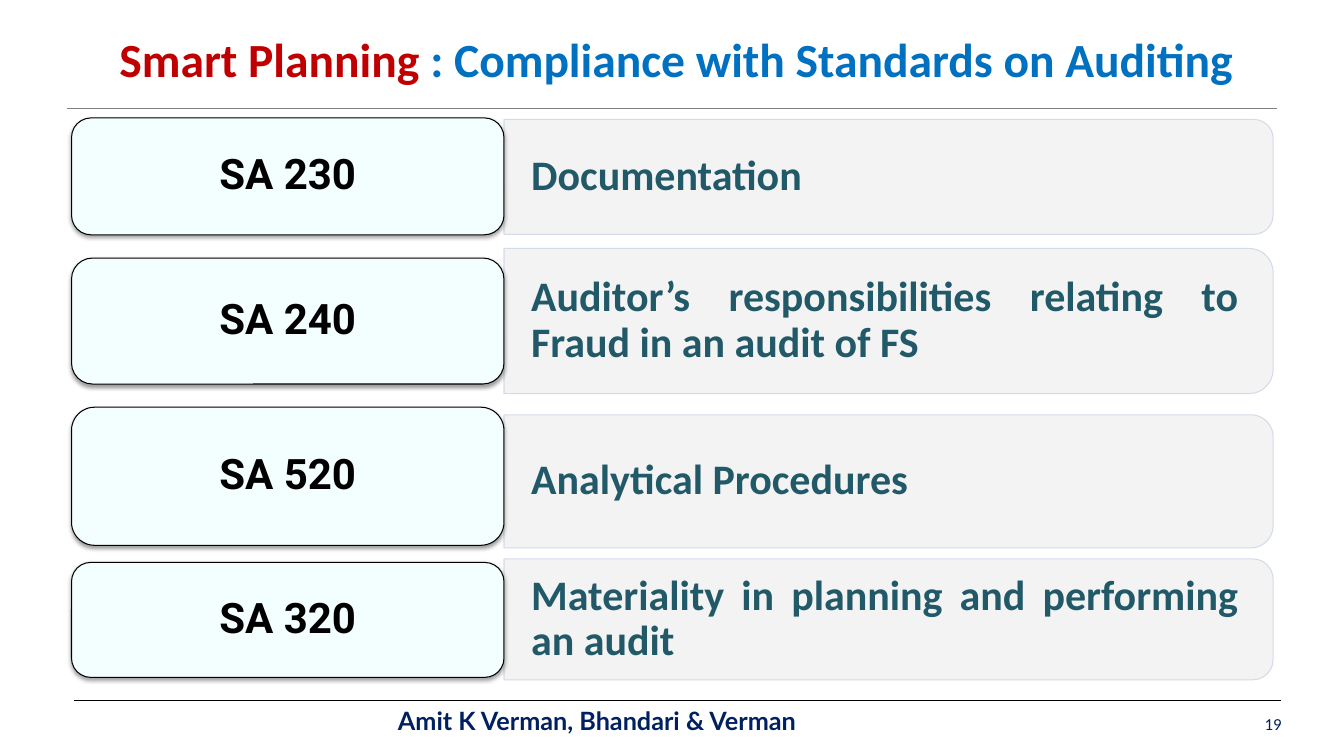
"""Build the slide on smart planning and the auditing standards."""
from lxml import etree
from pptx import Presentation, util as u
from pptx.dml.color import RGBColor
from pptx.enum import shapes, text
from pptx.oxml import ns, parse_xml

RED = RGBColor(0xC0, 0x00, 0x00)
BLUE = RGBColor(0x00, 0x70, 0xC0)
NAVY = RGBColor(0x00, 0x20, 0x60)
TEAL = RGBColor(0x21, 0x59, 0x68)
BLACK = RGBColor(0x00, 0x00, 0x00)
GREY = RGBColor(0x7F, 0x7F, 0x7F)
MINT = RGBColor(0xF3, 0xFE, 0xFF)
MIST = RGBColor(0xF2, 0xF2, 0xF2)
HAZE = RGBColor(0xD0, 0xD8, 0xE8)

COLUMNS, ROWS = 40, 30
CARD_LEFT, CARD_WIDTH = 2.13, 12.87
PANEL_LEFT, PANEL_WIDTH = 15, 22.89

STANDARDS = [
    ("SA 230", "Documentation", (7, 4.64), (7.02, 4.56)),
    ("SA 240", "Auditor’s responsibilities relating to Fraud in an audit of FS",
     (12.74, 5), (12.74, 5.76)),
    ("SA 520", "Analytical Procedures", (18.9, 5.48), (19.1, 5.28)),
    ("SA 320", "Materiality in planning and performing an audit",
     (24.6, 4.56), (24.58, 4.8)),
]


class SlideBuilder:
    """Holds the grid, the style and the current page."""

    def __init__(self):
        self.deck = Presentation()
        self.deck.slide_width, self.deck.slide_height = u.Inches(13.33), u.Inches(7.5)
        self.page = self.deck.slides.add_slide(self.deck.slide_layouts[5])

    def x(self, columns):
        return round(self.deck.slide_width * columns / COLUMNS)

    def y(self, rows):
        return round(self.deck.slide_height * rows / ROWS)

    def area(self, left, top, width, height):
        return self.x(left), self.y(top), self.x(width), self.y(height)

    def set_text(self, box, spans, size, font, align, bold=True,
                 anchor=text.MSO_ANCHOR.MIDDLE, insets=(0.1, 0.05), spacing=1.0):
        frame = box.text_frame
        frame.word_wrap, frame.auto_size = True, text.MSO_AUTO_SIZE.NONE
        frame.vertical_anchor = anchor
        frame.margin_left = frame.margin_right = u.Inches(insets[0])
        frame.margin_top = frame.margin_bottom = u.Inches(insets[1])
        para = frame.paragraphs[0]
        para.alignment, para.line_spacing = align, spacing
        for words, colour in spans:
            span = para.add_run()
            span.text = words
            span.font.size, span.font.name, span.font.bold = u.Pt(size), font, bold
            span.font.color.rgb = colour

    def title(self, spans, place):
        box = self.page.shapes.title
        box.left, box.top, box.width, box.height = self.area(*place)
        self.set_text(box, spans, 34, "Calibri", text.PP_ALIGN.CENTER,
                      anchor=text.MSO_ANCHOR.TOP)

    def label(self, words, place, colour, size, font, align, **style):
        box = self.page.shapes.add_textbox(*self.area(*place))
        self.set_text(box, [(words, colour)], size, font, align, **style)

    def rule(self, left, right, row, colour):
        line = self.page.shapes.add_connector(
            shapes.MSO_CONNECTOR.STRAIGHT, self.x(left), self.y(row), self.x(right), self.y(row))
        line.line.color.rgb, line.line.width = colour, u.Pt(0.75)
        etree.SubElement(line._element.spPr, ns.qn("a:effectLst"))

    def paint(self, shape, fill, line):
        shape.shadow.inherit = False
        shape.fill.solid()
        shape.fill.fore_color.rgb = fill
        shape.line.color.rgb, shape.line.width = line, u.Pt(0.75)

    def panel(self, words, centre, height):
        """Draw the panel as a quarter-turned shape with level text over it."""
        width, depth = self.x(PANEL_WIDTH), self.y(height)
        shape = self.page.shapes.add_shape(
            shapes.MSO_SHAPE.ROUND_2_SAME_RECTANGLE,
            self.x(PANEL_LEFT) + (width - depth) // 2, self.y(centre) - width // 2, depth, width)
        shape.rotation = 90
        self.paint(shape, MIST, HAZE)
        for colour in shape._element.spPr.iter(ns.qn("a:srgbClr")):
            etree.SubElement(colour, ns.qn("a:alpha"), val="90000")
        self.label(words, (PANEL_LEFT, centre - height / 2, PANEL_WIDTH - 0.2, height),
                   TEAL, 30, "Calibri", text.PP_ALIGN.JUSTIFY,
                   insets=(0.27, 0.14), spacing=0.9)

    def card(self, words, centre, height):
        shape = self.page.shapes.add_shape(
            shapes.MSO_SHAPE.ROUNDED_RECTANGLE,
            *self.area(CARD_LEFT, centre - height / 2, CARD_WIDTH, height))
        self.paint(shape, MINT, BLACK)
        shape._element.spPr.find(ns.qn("a:effectLst")).append(parse_xml(
            f'<a:outerShdw {ns.nsdecls("a")} blurRad="{u.Pt(3.1)}" dist="{u.Pt(1.6)}" '
            'dir="5400000" rotWithShape="0"><a:srgbClr val="000000">'
            '<a:alpha val="38000"/></a:srgbClr></a:outerShdw>'))
        self.set_text(shape, [(words, BLACK)], 30, "Roboto", text.PP_ALIGN.CENTER,
                      insets=(0.12, 0.06), spacing=0.9)


def main():
    slide = SlideBuilder()
    slide.rule(2, 38, 4.32, GREY)
    slide.rule(2.2, 38.13, 27.8, BLACK)
    slide.label("Amit K Verman, Bhandari & Verman", (11.55, 28.12, 18.03, 0.96), NAVY,
                18, "Lato", text.PP_ALIGN.LEFT)
    slide.label("19", (27.84, 27.76, 10.6, 1.92), NAVY, 12, "Calibri",
                text.PP_ALIGN.RIGHT, bold=False)
    for name, subject, card, panel in STANDARDS:
        slide.panel(subject, *panel)
        slide.card(name, *card)
    slide.title([("Smart Planning ", RED), (": Compliance with Standards on Auditing", BLUE)],
                (2.13, 1, 36, 3.16))
    slide.deck.save("out.pptx")


if __name__ == "__main__":
    main()
